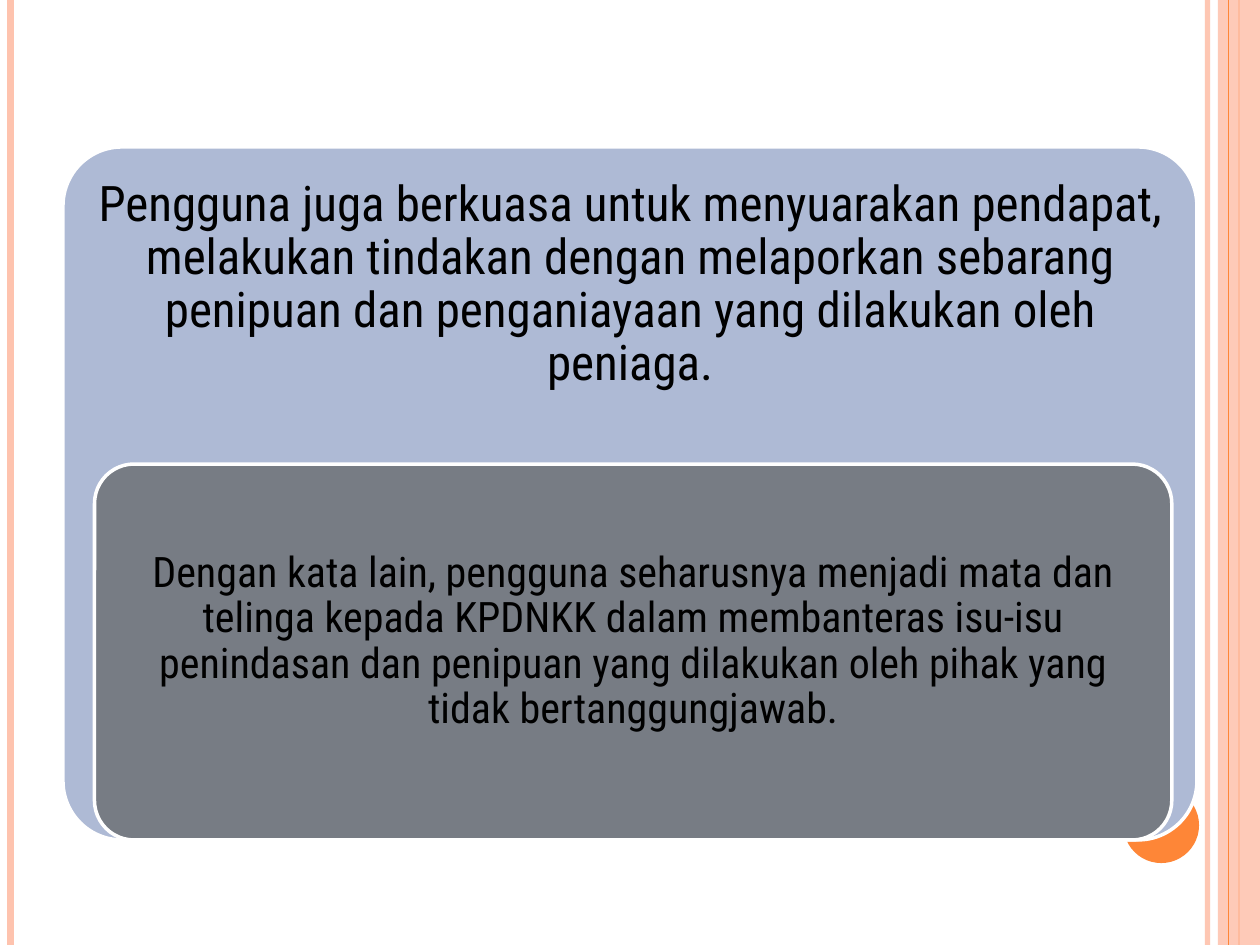
from lxml.etree import SubElement
from pptx import Presentation
from pptx.dml.color import RGBColor
from pptx.enum.shapes import MSO_CONNECTOR as Connector, MSO_SHAPE as Shape
from pptx.enum.text import MSO_ANCHOR as Anchor, PP_ALIGN as Align
from pptx.oxml.ns import qn
from pptx.util import Inches, Pt

COLUMNS, ROWS = 120, 90
CELL = Inches(10) / COLUMNS
CORNER_INSET = 0.29
FONT = "Roboto Condensed"

WHITE = RGBColor(0xFF, 0xFF, 0xFF)
BLACK = RGBColor(0x00, 0x00, 0x00)
ORANGE = RGBColor(0xFE, 0x86, 0x37)
PEACH = RGBColor(0xFE, 0xC3, 0xAE)
LAVENDER = RGBColor(0xAE, 0xBA, 0xD5)
GRAY = RGBColor(0x77, 0x7C, 0x84)

POWER_TEXT = (
    "Pengguna juga berkuasa untuk menyuarakan pendapat, melakukan tindakan "
    "dengan melaporkan sebarang penipuan dan penganiayaan yang dilakukan oleh peniaga."
)
WATCH_TEXT = (
    "Dengan kata lain, pengguna seharusnya menjadi mata dan telinga kepada KPDNKK "
    "dalam membanteras isu-isu penindasan dan penipuan yang dilakukan oleh pihak "
    "yang tidak bertanggungjawab."
)


def cells(*counts):
    """Turn counts of grid cells into slide lengths."""
    return [round(count * CELL) for count in counts]


def set_opacity(element, percent):
    """Make the solid colour inside an element partly transparent."""
    color = next(element.iter(qn("a:srgbClr")))
    SubElement(color, qn("a:alpha"), val=str(percent * 1000))


def add_stripe(page, column, color, width, opacity=100):
    """Draw a vertical line over the full height at a grid column."""
    stripe = page.shapes.add_connector(
        Connector.STRAIGHT, *cells(column, 0, column, ROWS))
    stripe.line.color.rgb = color
    stripe.line.width = Pt(width)
    properties = stripe._element.spPr
    SubElement(properties, qn("a:effectLst"))
    if opacity < 100:
        set_opacity(properties, opacity)


def add_figure(page, kind, area, fill, outline=None, opacity=100):
    """Draw a filled preset shape over an area of grid cells."""
    figure = page.shapes.add_shape(kind, *cells(*area))
    figure.shadow.inherit = False
    figure.fill.solid()
    figure.fill.fore_color.rgb = fill
    if outline is None:
        figure.line.fill.background()
    else:
        figure.line.color.rgb = outline
        figure.line.width = Pt(2)
    if opacity < 100:
        set_opacity(figure._element.spPr, opacity)
    return figure


def add_text(page, text, area, *, size, margin, top, color=BLACK):
    """Write a centred paragraph from the top of an area of grid cells."""
    box = page.shapes.add_textbox(*cells(*area))
    frame = box.text_frame
    frame.word_wrap = True
    frame.vertical_anchor = Anchor.TOP
    frame.margin_left = frame.margin_right = frame.margin_bottom = Inches(margin)
    frame.margin_top = Inches(top)
    para = frame.paragraphs[0]
    para.alignment = Align.CENTER
    para.line_spacing = 0.9
    span = para.add_run()
    span.text = text
    span.font.name = FONT
    span.font.size = Pt(size)
    span.font.color.rgb = color


def add_panel(page, text, area, *, fill, corner, **text_format):
    """Draw a rounded panel with its text set inside the corner curves."""
    panel = add_figure(page, Shape.ROUNDED_RECTANGLE, area, fill, WHITE)
    panel.adjustments[0] = corner
    left, top, width, height = area
    inset = CORNER_INSET * corner * height
    inner = (left + inset, top + inset, width - 2 * inset, height - 2 * inset)
    add_text(page, text, inner, **text_format)


def add_border(page):
    """Draw the stripes, band and dot that frame the slide."""
    add_stripe(page, 115, PEACH, 3, opacity=93)
    add_stripe(page, 1, PEACH, 4.5)
    add_stripe(page, 118, ORANGE, 1.5)
    add_figure(page, Shape.RECTANGLE, (116, 0, 4, ROWS), PEACH, opacity=87)
    add_stripe(page, 117, ORANGE, 0.75)
    add_figure(page, Shape.OVAL, (107, 75, 7.2, 7.2), ORANGE)


def main():
    """Build the slide and save the deck."""
    deck = Presentation()
    deck.slide_width, deck.slide_height = cells(COLUMNS, ROWS)
    page = deck.slides.add_slide(deck.slide_layouts[6])
    add_border(page)
    add_panel(page, POWER_TEXT, (6, 14, 108, 66), fill=LAVENDER, corner=0.085,
              size=28, margin=0.12, top=0.12)
    add_panel(page, WATCH_TEXT, (9, 44.2, 102.6, 35.8), fill=GRAY, corner=0.105,
              size=24, margin=0.1, top=0.6)
    deck.save("out.pptx")


if __name__ == "__main__":
    main()
